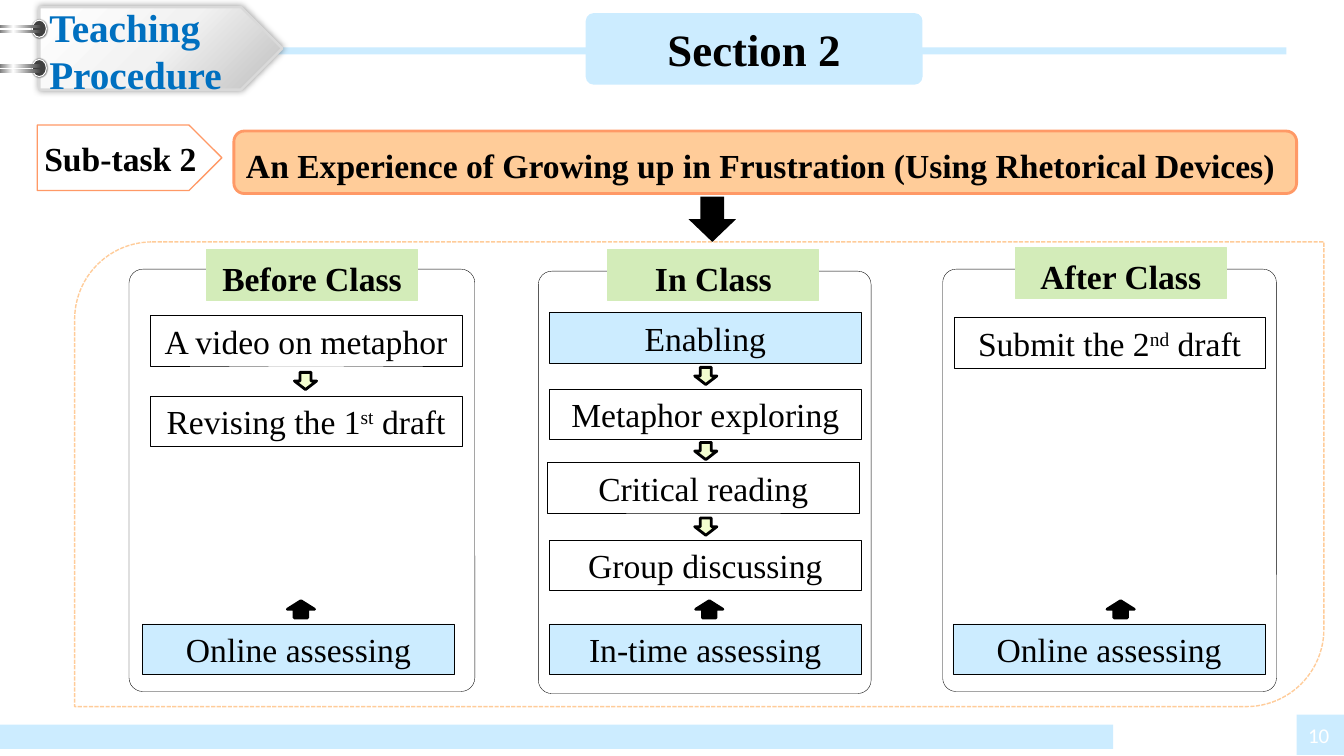
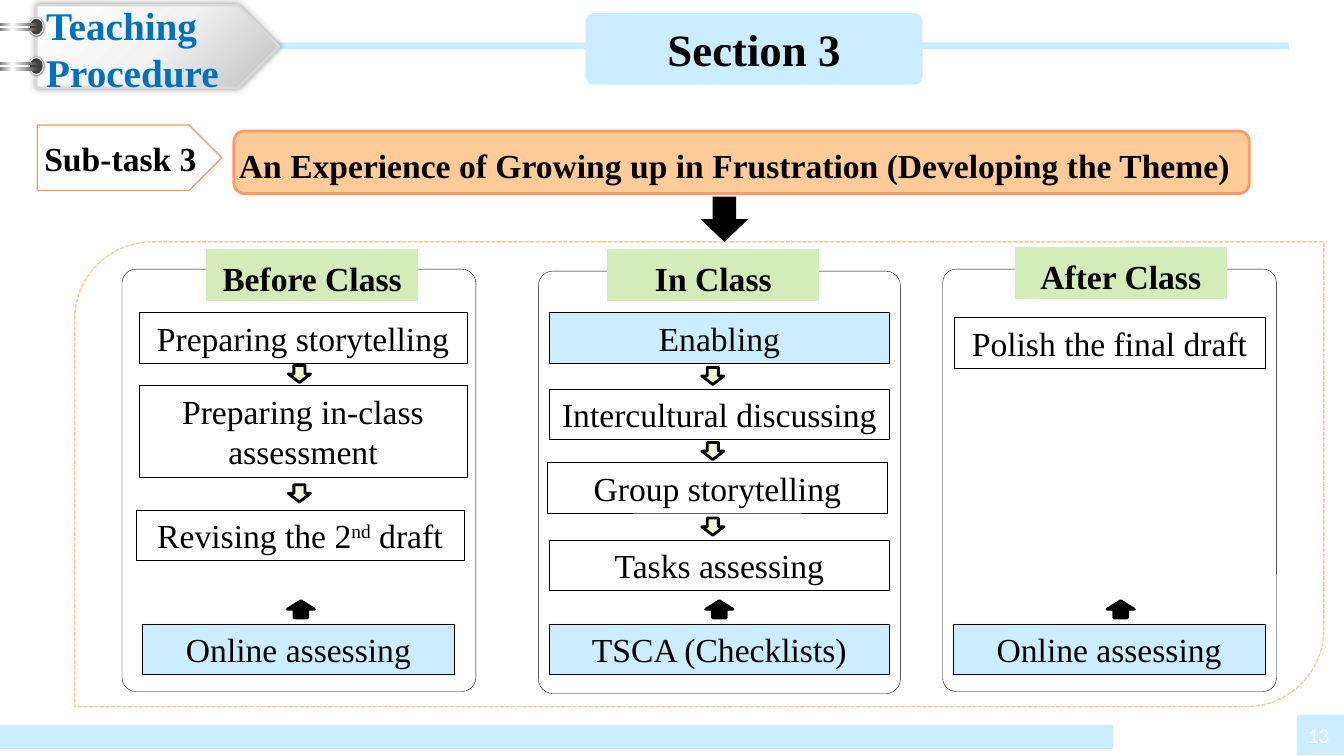
from lxml.etree import SubElement
from pptx import Presentation
from pptx.dml.color import RGBColor
from pptx.enum.dml import MSO_LINE
from pptx.enum.shapes import MSO_SHAPE
from pptx.enum.text import MSO_ANCHOR, PP_ALIGN
from pptx.oxml.ns import qn
from pptx.util import Inches, Pt

BLACK, WHITE = "000000", "FFFFFF"
SKY, GREEN, LIME = "CCECFF", "D3ECB9", "F2FDCF"
PEACH, ORANGE, BLUE = "FFCC99", "FF9966", "0070C0"
BODY = {"name": "Times New Roman", "size": Pt(24), "bold": False, "color": BLACK}
STRONG = {**BODY, "bold": True}
TITLE = {**STRONG, "size": Pt(32)}
BADGE = {**STRONG, "size": Pt(28), "color": BLUE}
NUMBER = {"size": Pt(15), "color": WHITE}
PLATE_STOPS = [(0, WHITE), (50, "F2F2F2"), (100, "BFBFBF")]
RING_STOPS = [(0, "404040"), (68, WHITE), (100, "808080")]
STEP_HEIGHT = 0.5


def rgb(value):
    return RGBColor.from_string(value)


def set_font(font, style):
    for name, value in style.items():
        if name == "color":
            font.color.rgb = rgb(value)
        else:
            setattr(font, name, value)


def write(shape, text, style, align=PP_ALIGN.CENTER, insets=(0.05, 0.05, 0.05, 0.05), wrap=True):
    """Write text in a shape; parts between ^ marks are superscript."""
    frame = shape.text_frame
    frame.word_wrap = wrap
    frame.vertical_anchor = MSO_ANCHOR.MIDDLE
    for side, inset in zip(("left", "top", "right", "bottom"), insets):
        setattr(frame, f"margin_{side}", Inches(inset))
    para = frame.paragraphs[0]
    para.alignment = align
    para.space_before = Pt(0)
    for index, part in enumerate(text.split("^")):
        span = para.add_run()
        span.text = part
        set_font(span.font, style)
        if index % 2:
            span.font._element.set("baseline", "30000")


def add_box(page, kind, box, fill=None, line=None, width=0.25, corner=None):
    shape = page.shapes.add_shape(kind, *map(Inches, box))
    shape.shadow.inherit = False
    if fill:
        shape.fill.solid()
        shape.fill.fore_color.rgb = rgb(fill)
    else:
        shape.fill.background()
    if line:
        shape.line.color.rgb = rgb(line)
        shape.line.width = Pt(width)
    else:
        shape.line.fill.background()
    if corner is not None:
        shape.adjustments[0] = corner
    return shape


def set_gradient(shape, stops, angle):
    shape.fill.gradient()
    shape.fill.gradient_angle = angle
    stop_list = shape._element.spPr.find(qn("a:gradFill")).find(qn("a:gsLst"))
    for stop in list(stop_list):
        stop_list.remove(stop)
    for position, color in stops:
        stop = SubElement(stop_list, qn("a:gs"), pos=str(position * 1000))
        SubElement(stop, qn("a:srgbClr"), val=color)


def add_shadow(shape, opacity, blur):
    effects = shape._element.spPr.find(qn("a:effectLst"))
    shadow = SubElement(effects, qn("a:outerShdw"), blurRad=str(Pt(blur)),
                        dist="0", algn="ctr", rotWithShape="0")
    color = SubElement(shadow, qn("a:srgbClr"), val=BLACK)
    SubElement(color, qn("a:alpha"), val=str(opacity * 1000))


def add_footer(page, number):
    add_box(page, MSO_SHAPE.RECTANGLE, (0, 7.19, 11.04, 0.24), SKY)
    corner = add_box(page, MSO_SHAPE.RECTANGLE, (12.86, 7.09, 0.47, 0.4), SKY)
    write(corner, number, NUMBER, insets=(0, 0, 0.03, 0))


def add_badge(page, left, top):
    """Arrow-shaped tag held by two binder rings."""
    plate = add_box(page, MSO_SHAPE.PENTAGON, (left, top, 2.41, 0.82), WHITE, "D9D9D9", 1.75)
    set_gradient(plate, PLATE_STOPS, 315)
    add_shadow(plate, 40, 5)
    write(plate, "Teaching Procedure", BADGE, PP_ALIGN.LEFT, (0.1, 0.05, 0.1, 0.02))
    holes = [top + 0.13, top + 0.52]
    for hole in holes:
        knob = add_box(page, MSO_SHAPE.OVAL, (left - 0.07, hole, 0.14, 0.17),
                       "404040", WHITE, 0.75)
        add_shadow(knob, 55, 1)
    for hole in holes:
        for offset in (0.05, 0.1):
            ring = add_box(page, MSO_SHAPE.ROUNDED_RECTANGLE,
                           (0, hole + offset, left + 0.02, 0.03), WHITE)
            set_gradient(ring, RING_STOPS, 180)


def add_header(page, title, bar, badge):
    add_box(page, MSO_SHAPE.RECTANGLE, (*bar, 11.91, 0.07), SKY)
    add_badge(page, *badge)
    add_box(page, MSO_SHAPE.ROUNDED_RECTANGLE, (5.81, 0.13, 3.34, 0.71), SKY, corner=0.11)
    # Title goes in front of its panel
    heading = page.shapes.title
    heading.left, heading.top, heading.width, heading.height = map(
        Inches, (6.52, 0.15, 1.93, 0.64))
    write(heading, title, TITLE, PP_ALIGN.LEFT, (0.1, 0.08, 0, 0.05), wrap=False)
    heading._element.getparent().append(heading._element)


def add_task(page, label, topic, width, indent, arrow_left):
    """Task label, topic banner and the arrow down to the panel."""
    tag = add_box(page, MSO_SHAPE.PENTAGON, (0.37, 1.24, 1.83, 0.65), line=ORANGE, width=1)
    write(tag, label, STRONG, PP_ALIGN.LEFT, (0.07, 0.05, 0, 0.05), wrap=False)
    banner = add_box(page, MSO_SHAPE.ROUNDED_RECTANGLE, (2.32, 1.3, width, 0.62),
                     PEACH, ORANGE, 2)
    write(banner, topic, STRONG, PP_ALIGN.LEFT, (indent, 0.08, 0, 0.03))
    add_box(page, MSO_SHAPE.DOWN_ARROW, (arrow_left, 1.95, 0.47, 0.45), BLACK)


def add_step(page, text, box, fill=None):
    write(add_box(page, MSO_SHAPE.RECTANGLE, box, fill, BLACK), text, BODY)


def add_column(page, heading, frame, tab, steps, flow_center, check, check_box, check_center):
    """One stage: frame, heading tab, chained steps, and the assessment below."""
    add_box(page, MSO_SHAPE.ROUNDED_RECTANGLE, (*frame, 4.19), line=BLACK, corner=0.04)
    head = add_box(page, MSO_SHAPE.RECTANGLE, (*tab, 2.09, 0.5), GREEN, GREEN, 0.75)
    write(head, heading, STRONG, insets=(0.05, 0.08, 0.05, 0.03))
    bottom = None
    for text, left, top, width, *height in steps:
        tall = height[0] if height else STEP_HEIGHT
        add_step(page, text, (left, top, width, tall), SKY if text == "Enabling" else None)
        if bottom:
            add_box(page, MSO_SHAPE.DOWN_ARROW,
                    (flow_center - 0.11, (bottom + top - 0.17) / 2, 0.22, 0.17),
                    LIME, BLACK, 2)
        bottom = top + tall
    left, width = check_box
    add_step(page, check, (left, 6.19, width, STEP_HEIGHT), SKY)
    add_box(page, MSO_SHAPE.UP_ARROW, (check_center - 0.13, 5.96, 0.27, 0.17), BLACK, BLACK, 2)


def before_class(left, width, steps, flow_center):
    return dict(heading="Before Class", frame=(left, 2.67, width), tab=(2.05, 2.48),
                steps=steps, flow_center=flow_center, check="Online assessing",
                check_box=(1.41, 3.1), check_center=2.98)


def in_class(width, step_width, names, flow_center, check, check_center):
    places = [(5.45, 3.1), (5.45, 3.86), (5.43, 4.59), (5.45, 5.36)]
    steps = [(name, *place, step_width) for name, place in zip(names, places)]
    return dict(heading="In Class", frame=(5.34, 2.69, width), tab=(6.03, 2.48),
                steps=steps, flow_center=flow_center, check=check,
                check_box=(5.45, step_width), check_center=check_center)


def after_class(step):
    return dict(heading="After Class", frame=(9.35, 2.67, 3.31), tab=(10.07, 2.46),
                steps=[(step, 9.46, 3.15, 3.09)], flow_center=11.0,
                check="Online assessing", check_box=(9.45, 3.1), check_center=11.11)


def add_section(deck, number, header, task, columns):
    page = deck.slides.add_slide(deck.slide_layouts[5])
    add_footer(page, number)
    add_header(page, **header)
    panel = add_box(page, MSO_SHAPE.ROUND_2_DIAG_RECTANGLE, (0.74, 2.4, 12.39, 4.61),
                    line=PEACH, width=1)
    panel.line.dash_style = MSO_LINE.SQUARE_DOT
    add_task(page, **task)
    for column in columns:
        add_column(page, **column)


SECTIONS = [
    dict(
        number="10",
        header=dict(title="Section 2", bar=(0.85, 0.47), badge=(0.39, 0.07)),
        task=dict(
            label="Sub-task 2",
            topic="An Experience of Growing up in Frustration (Using Rhetorical Devices)",
            width=10.54, indent=0.09, arrow_left=6.83),
        columns=[
            before_class(1.28, 3.43, [("A video on metaphor", 1.49, 3.13, 3.09),
                                      ("Revising the 1^st^ draft", 1.49, 3.93, 3.09)], 3.03),
            in_class(3.3, 3.09, ["Enabling", "Metaphor exploring", "Critical reading",
                                 "Group discussing"], 7.0, "In-time assessing", 7.03),
            after_class("Submit the 2^nd^ draft"),
        ]),
    dict(
        number="13",
        header=dict(title="Section 3", bar=(0.87, 0.42), badge=(0.36, 0.05)),
        task=dict(
            label="Sub-task 3",
            topic="An Experience of Growing up in Frustration (Developing the Theme)",
            width=10.07, indent=0.02, arrow_left=6.95),
        columns=[
            before_class(1.21, 3.51, [("Preparing storytelling", 1.38, 3.1, 3.25),
                                      ("Preparing in-class assessment", 1.38, 3.82, 3.25, 0.91),
                                      ("Revising the 2^nd^ draft", 1.35, 5.06, 3.25)], 2.97),
            in_class(3.59, 3.37, ["Enabling", "Intercultural discussing", "Group storytelling",
                                  "Tasks assessing"], 7.07, "TSCA (Checklists)", 7.13),
            after_class("Polish the final draft"),
        ]),
]


def main():
    deck = Presentation()
    deck.slide_width, deck.slide_height = Inches(13.33), Inches(7.5)
    for section in SECTIONS:
        add_section(deck, **section)
    deck.save("out.pptx")


if __name__ == "__main__":
    main()
